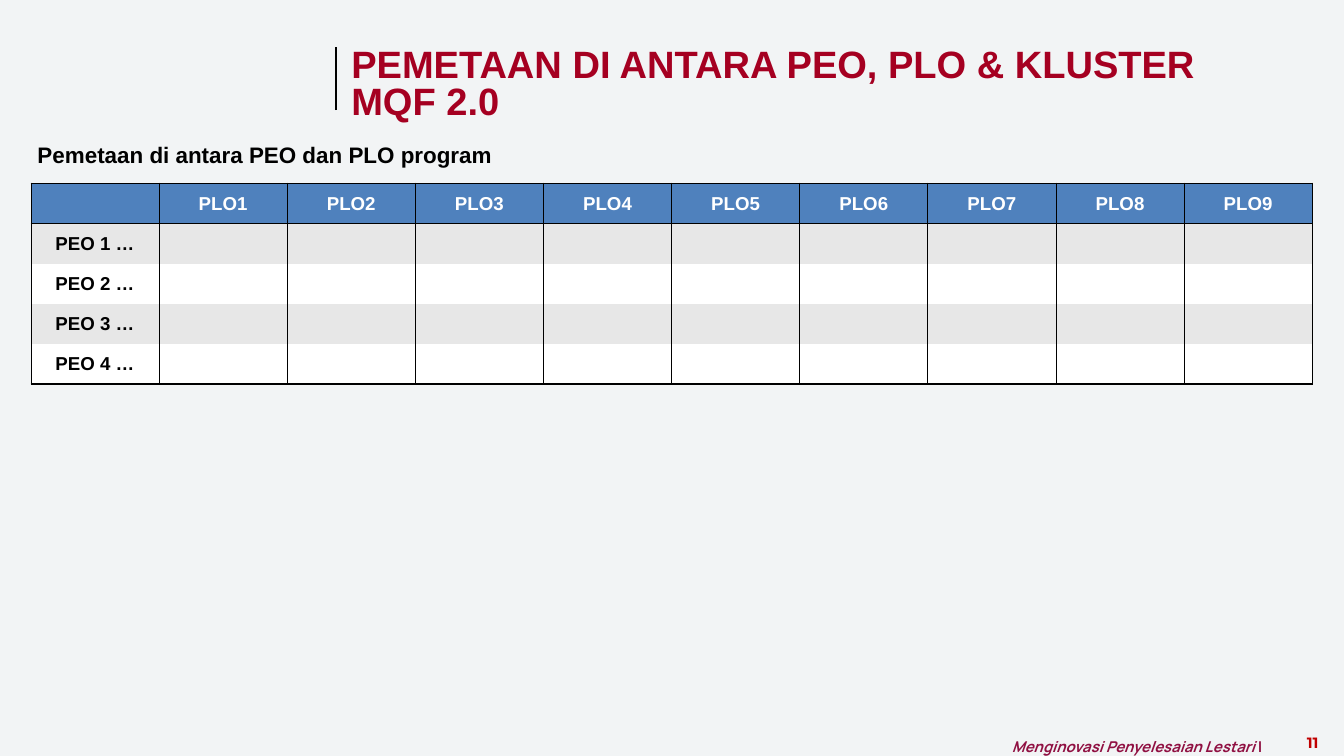
from lxml import etree
from pptx import Presentation
from pptx.dml.color import RGBColor
from pptx.enum.shapes import MSO_CONNECTOR
from pptx.enum.text import MSO_ANCHOR, PP_ALIGN
from pptx.oxml.ns import qn
from pptx.util import Emu, Pt

PX = 9144  # 100 px to the inch
BLACK, WHITE, GREY, BLUE = "000000", "FFFFFF", "E7E7E7", "4F81BD"


def px(n):
    return Emu(n * PX)


def rgb(color):
    return RGBColor.from_string(color)


class Deck:
    font = "Arial"

    def __init__(self, width, height, background):
        self.prs = Presentation()
        self.prs.slide_width, self.prs.slide_height = px(width), px(height)
        self.s = self.prs.slides.add_slide(self.prs.slide_layouts[6])
        fill = self.s.background.fill
        fill.solid()
        fill.fore_color.rgb = rgb(background)

    def style(self, p, size, color, font=None, italic=None, align=None):
        p.font.name, p.font.size, p.font.bold = font or self.font, Pt(size), True
        p.font.color.rgb = rgb(color)
        p.font.italic = italic
        p.alignment = align

    def text(self, box, text, size, color, anchor=MSO_ANCHOR.TOP, inset=True,
             spacing=None, **style):
        tf = self.s.shapes.add_textbox(*map(px, box)).text_frame
        tf.word_wrap = True
        tf.vertical_anchor = anchor
        if not inset:
            tf.margin_left = tf.margin_top = tf.margin_right = tf.margin_bottom = 0
        p = tf.paragraphs[0]
        p.text = text
        p.line_spacing = spacing
        self.style(p, size, color, **style)
        return p

    def line(self, x1, y1, x2, y2, color, width):
        sp = self.s.shapes.add_connector(MSO_CONNECTOR.STRAIGHT,
                                         *map(px, (x1, y1, x2, y2)))
        sp.line.color.rgb = rgb(color)
        sp.line.width = Pt(width)
        etree.SubElement(sp._element.spPr, qn("a:effectLst"))

    def borders(self, cell, widths):
        """Set left, right, top and bottom borders; width 0 hides one."""
        tcPr = cell._tc.get_or_add_tcPr()
        for i, (side, width) in enumerate(zip("LRTB", widths)):
            ln = etree.Element(qn(f"a:ln{side}"), w=str(Pt(width)))
            if width:
                fill = etree.SubElement(ln, qn("a:solidFill"))
                etree.SubElement(fill, qn("a:srgbClr"), val=BLACK)
            else:
                etree.SubElement(ln, qn("a:noFill"))
            tcPr.insert(i, ln)

    def table(self, box, rows, size):
        last = len(rows) - 1
        table = self.s.shapes.add_table(len(rows), len(rows[0]),
                                        *map(px, box)).table
        for i, row in enumerate(rows):
            fill = BLUE if i == 0 else GREY if i % 2 else WHITE
            for j, text in enumerate(row):
                cell = table.cell(i, j)
                cell.fill.solid()
                cell.fill.fore_color.rgb = rgb(fill)
                cell.vertical_anchor = MSO_ANCHOR.MIDDLE
                p = cell.text_frame.paragraphs[0]
                if text:
                    p.text = text
                self.style(p, size, BLACK if i else WHITE, align=PP_ALIGN.CENTER)
                self.borders(cell, (1, 1, 0 if i else 2,
                                    2 if i in (0, last) else 0))


def main():
    d = Deck(2000, 1125, "F2F4F5")

    # Footer and slide number
    p = d.text((1506, 1087, 420, 38), "Menginovasi Penyelesaian Lestari ", 16,
               "901042", inset=False, spacing=1.4, font="Manrope")
    p.runs[0].font.italic = True
    p.add_run().text = "|"
    d.text((1907, 1087, 93, 37), "11", 16, "C00000", font="Montserrat",
           align=PP_ALIGN.CENTER)

    # Title with its rule
    d.line(500, 164, 500, 70, BLACK, 3)
    d.text((513, 69, 1293, 125), "PEMETAAN DI ANTARA PEO, PLO & KLUSTER MQF 2.0",
           40.8, "A50021", spacing=0.8)

    # Mapping table with its heading
    d.text((46, 193, 1526, 75), "Pemetaan di antara PEO dan PLO program", 24,
           BLACK, anchor=MSO_ANCHOR.MIDDLE)
    outcomes = 9
    rows = [[""] + [f"PLO{n}" for n in range(1, outcomes + 1)]]
    rows += [[f"PEO {n} …"] + [""] * outcomes for n in range(1, 5)]
    d.table((46, 273, 1907, 299), rows, 20)

    d.prs.save("out.pptx")


if __name__ == "__main__":
    main()
